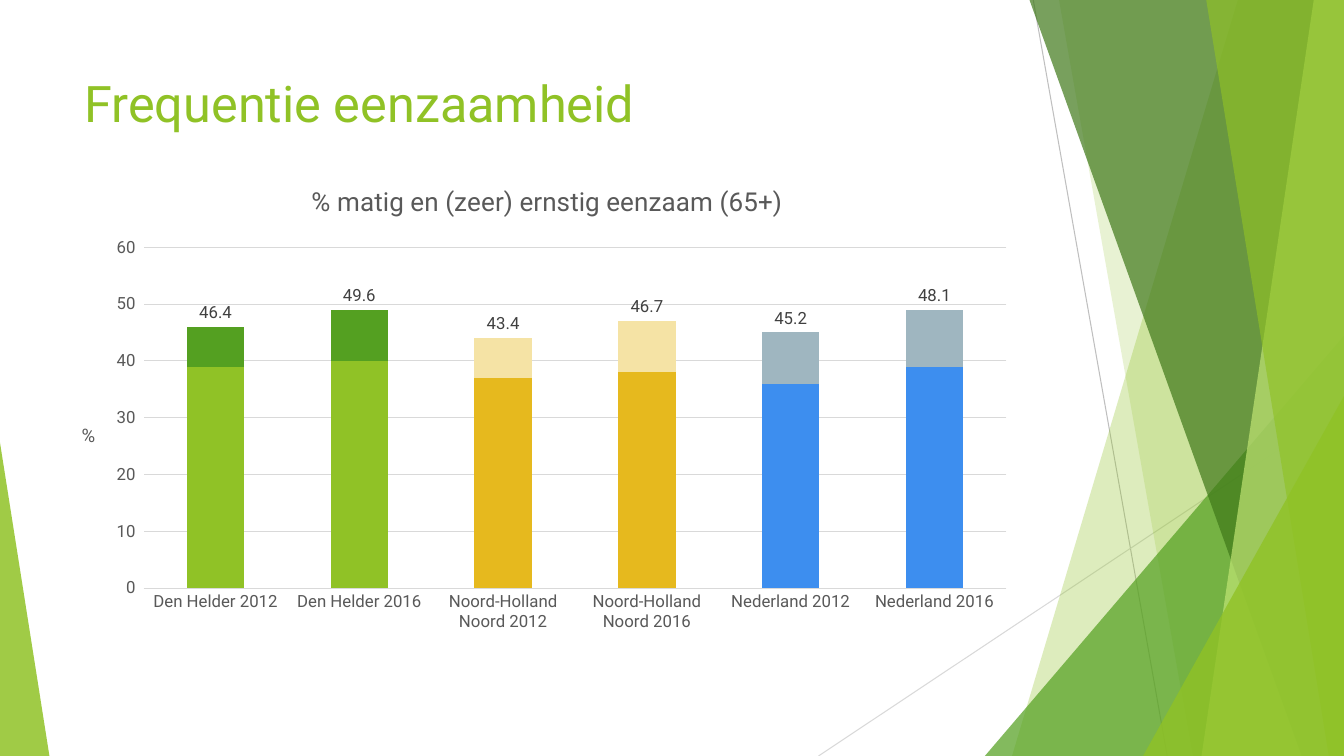
from dataclasses import dataclass

from lxml import etree
from pptx import Presentation
from pptx.chart.data import CategoryChartData
from pptx.dml.color import RGBColor
from pptx.enum.chart import XL_CHART_TYPE, XL_LABEL_POSITION, XL_TICK_MARK
from pptx.enum.shapes import MSO_CONNECTOR, MSO_SHAPE
from pptx.enum.text import MSO_ANCHOR
from pptx.oxml.ns import qn
from pptx.util import Inches, Pt

STACKED = XL_CHART_TYPE.COLUMN_STACKED
INSIDE_BASE = XL_LABEL_POSITION.INSIDE_BASE
NO_TICK = XL_TICK_MARK.NONE
STRAIGHT = MSO_CONNECTOR.STRAIGHT
TRIANGLE = MSO_SHAPE.ISOSCELES_TRIANGLE
TOP = MSO_ANCHOR.TOP

SLIDE_WIDTH, SLIDE_HEIGHT = Inches(13.33), Inches(7.5)


@dataclass(frozen=True)
class Theme:
    font: str = "Roboto"
    title_size: float = 36
    chart_title_size: float = 18.6
    axis_title_size: float = 13.3
    chart_size: float = 12
    lime: str = "90C226"
    green: str = "54A021"
    forest: str = "3F7819"
    pale_lime: str = "C0E474"
    text: str = "595959"
    label: str = "404040"
    grid: str = "D9D9D9"
    ray: str = "BFBFBF"
    hairline: float = 0.75
    # One colour per region, each used for two years
    moderate: tuple = ("90C226", "E6B91E", "3D8EEF")
    severe: tuple = ("54A021", "F5E3A5", "9FB6C0")


THEME = Theme()

REGIONS = ("Den Helder", "Noord-Holland Noord", "Nederland")
YEARS = (2012, 2016)
MODERATE = (39, 40, 37, 38, 36, 39)
SEVERE = (7, 9, 7, 9, 9, 10)
TOTAL = (46.4, 49.6, 43.4, 46.7, 45.2, 48.1)


def across(percent):
    return round(SLIDE_WIDTH * percent / 100)


def down(percent):
    return round(SLIDE_HEIGHT * percent / 100)


def area(left, top, width, height):
    return across(left), down(top), across(width), down(height)


def rgb(color):
    return RGBColor.from_string(color)


def style_font(font, size, color):
    font.name = THEME.font
    font.size = Pt(size)
    font.bold = False
    font.color.rgb = rgb(color)


def style_line(line, color):
    line.color.rgb = rgb(color)
    line.width = Pt(THEME.hairline)


def add_ray(slide, start, end, color):
    ray = slide.shapes.add_connector(
        STRAIGHT, across(start[0]), down(start[1]), across(end[0]), down(end[1]))
    style_line(ray.line, color)
    etree.SubElement(ray._element.spPr, qn("a:effectLst"))


def tint(facet, color, opacity):
    """Fill a facet with a partly transparent colour; opacity is in percent."""
    facet.shadow.inherit = False
    facet.line.fill.background()
    facet.fill.solid()
    facet.fill.fore_color.rgb = rgb(color)
    fill_color = facet._element.spPr.find(".//" + qn("a:srgbClr"))
    etree.SubElement(fill_color, qn("a:alpha"), val=str(opacity * 1000))


def add_ribbon(slide, top_x, bottom_x, color, opacity):
    """Fill from a slanted edge to the right side of the slide."""
    builder = slide.shapes.build_freeform(across(top_x), 0)
    corners = ((100, 0), (100, 100), (bottom_x, 100))
    builder.add_line_segments([(across(x), down(y)) for x, y in corners], close=True)
    tint(builder.convert_to_shape(), color, opacity)


def add_corner(slide, box, apex, color, opacity):
    corner = slide.shapes.add_shape(TRIANGLE, *area(*box))
    corner.adjustments[0] = apex
    tint(corner, color, opacity)


def add_backdrop(slide):
    add_ray(slide, (76.88, 0), (86.85, 100), THEME.ray)
    add_ray(slide, (100, 53.73), (60.9, 100), THEME.grid)
    add_ribbon(slide, 92.1, 75.3, THEME.lime, 30)
    add_ribbon(slide, 78.8, 88.75, THEME.lime, 20)
    add_corner(slide, (73.28, 44.4, 26.72, 55.6), 1, THEME.green, 72)
    add_ribbon(slide, 76.6, 96.85, THEME.forest, 70)
    add_ribbon(slide, 97.75, 89.4, THEME.pale_lime, 70)
    add_ribbon(slide, 89.75, 98.87, THEME.lime, 65)
    add_corner(slide, (85.05, 52.4, 14.95, 47.6), 1, THEME.lime, 80)
    add_corner(slide, (0, 58.53, 3.68, 41.47), 0, THEME.lime, 85)


def add_title(slide, wording):
    frame = slide.shapes.add_textbox(*area(5.55, 8.93, 70.5, 19.2)).text_frame
    frame.word_wrap = True
    frame.vertical_anchor = TOP
    heading = frame.paragraphs[0]
    heading.text = wording
    style_font(heading.font, THEME.title_size, THEME.lime)


def place(element, index, shares, **settings):
    """Give a chart part a manual layout; shares are percentages of the chart."""
    for old in element.findall(qn("c:layout")):
        element.remove(old)
    layout = etree.Element(qn("c:layout"))
    manual = etree.SubElement(layout, qn("c:manualLayout"))
    settings.update(xMode="edge", yMode="edge")
    settings.update((tag, share / 100) for tag, share in zip("xywh", shares))
    for tag, value in settings.items():
        etree.SubElement(manual, qn("c:" + tag), val=str(value))
    element.insert(index, layout)


def write_chart_title(title, wording, size, position):
    title.text_frame.text = wording
    style_font(title.text_frame.paragraphs[0].font, size, THEME.text)
    title._element.find(".//" + qn("a:bodyPr")).set("rot", "0")
    place(title._element, 1, position)


def style_axes(chart):
    for axis in (chart.category_axis, chart.value_axis):
        axis.major_tick_mark = axis.minor_tick_mark = NO_TICK
        style_font(axis.tick_labels.font, THEME.chart_size, THEME.text)
    style_line(chart.category_axis.format.line, THEME.grid)
    percent = chart.value_axis
    percent.minimum_scale, percent.maximum_scale, percent.major_unit = 0, 60, 10
    percent.tick_labels.number_format = r"#,##0_);\(#,##0\)"
    percent.tick_labels.number_format_is_linked = False
    percent.format.line.fill.background()
    style_line(percent.major_gridlines.format.line, THEME.grid)
    write_chart_title(percent.axis_title, "%", THEME.axis_title_size, (0.4, 49.6))


def color_by_region(series, colors):
    series.format.fill.solid()
    series.format.fill.fore_color.rgb = rgb(colors[0])
    for index in range(len(YEARS), len(REGIONS) * len(YEARS)):
        fill = series.points[index].format.fill
        fill.solid()
        fill.fore_color.rgb = rgb(colors[index // len(YEARS)])


def label_totals(series):
    series.format.fill.background()
    labels = series.data_labels
    labels.show_value = True
    labels.position = INSIDE_BASE
    labels.number_format = "0.0"
    labels.number_format_is_linked = False
    style_font(labels.font, THEME.chart_size, THEME.label)


def add_loneliness_chart(slide):
    data = CategoryChartData()
    data.categories = [f"{region} {year}" for region in REGIONS for year in YEARS]
    for number, values in enumerate((MODERATE, SEVERE, TOTAL), 1):
        data.add_series(f"Series {number}", values)
    chart = slide.shapes.add_chart(STACKED, *area(5.55, 21.47, 70.5, 68.53), data).chart
    chart.has_legend = False
    style_font(chart.font, THEME.chart_size, THEME.text)
    write_chart_title(chart.chart_title, "% matig en (zeer) ernstig eenzaam (65+)",
                      THEME.chart_title_size, (24.5, 3.4))
    style_axes(chart)
    plot = chart.plots[0]
    plot.gap_width, plot.overlap, plot.vary_by_categories = 150, 100, False
    moderate, severe, total = plot.series
    color_by_region(moderate, THEME.moderate)
    color_by_region(severe, THEME.severe)
    label_totals(total)
    place(chart._chartSpace.find(".//" + qn("c:plotArea")), 0,
          (7.3, 16.4, 91.05, 65.8), layoutTarget="inner")


def main():
    deck = Presentation()
    deck.slide_width, deck.slide_height = SLIDE_WIDTH, SLIDE_HEIGHT
    slide = deck.slides.add_slide(deck.slide_layouts[6])
    add_backdrop(slide)
    add_title(slide, "Frequentie eenzaamheid")
    add_loneliness_chart(slide)
    deck.save("out.pptx")


if __name__ == "__main__":
    main()
